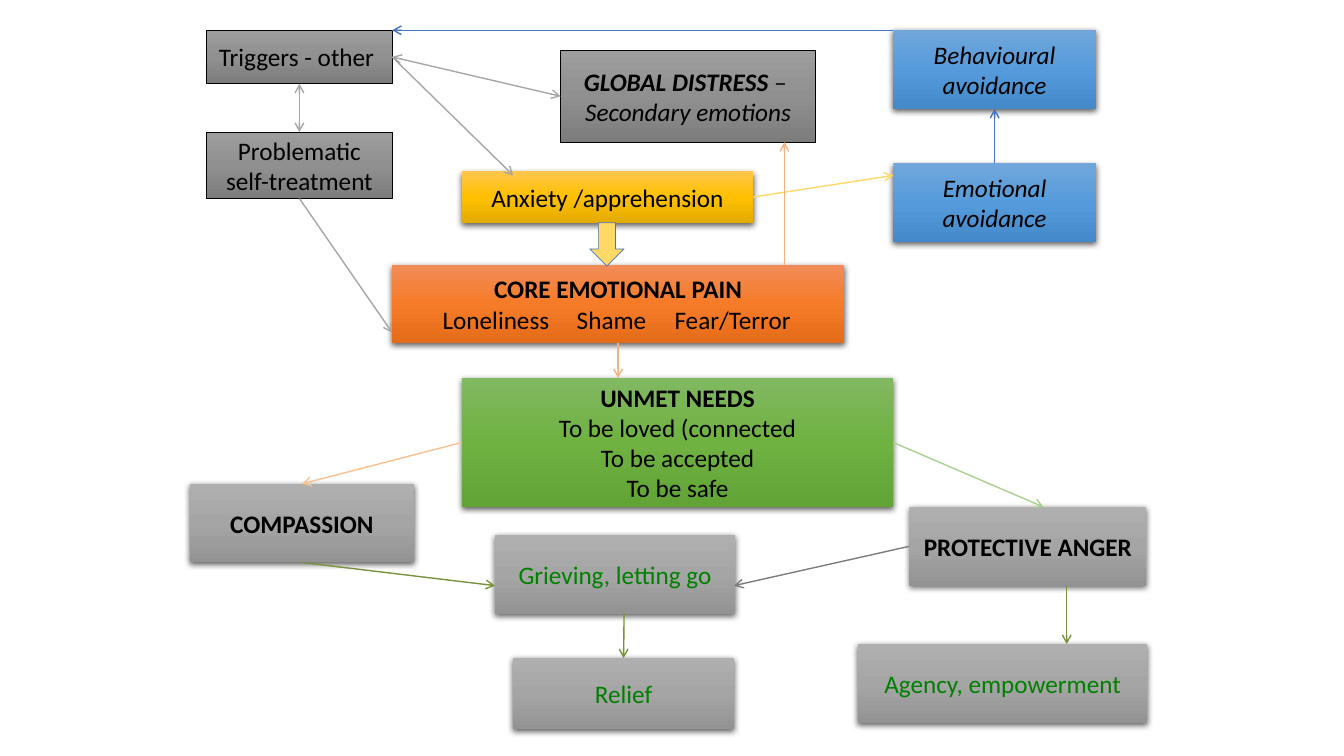
"""Build a one-slide map of emotional pain, unmet needs and ways of healing."""
from dataclasses import dataclass

from lxml.etree import SubElement
from pptx import Presentation
from pptx.dml.color import RGBColor as Rgb
from pptx.enum.shapes import MSO_CONNECTOR as Connector, MSO_SHAPE as Preset
from pptx.enum.text import MSO_ANCHOR as Anchor, PP_ALIGN as Align
from pptx.oxml.ns import qn
from pptx.util import Inches, Pt

TOP, LEFT, BOTTOM, RIGHT = range(4)


@dataclass(frozen=True)
class Theme:
    font: str = "Calibri"
    size: float = 18
    outline: float = 0.5
    stroke: float = 1
    ink: str = "000000"
    healing_ink: str = "008000"
    trigger: tuple = ("9D9D9D", "909090", "7C7C7C")
    avoidance: tuple = ("71A6DB", "559BDB", "448ACA")
    anxiety: tuple = ("FFC64B", "FFC000", "E3AB00")
    pain: tuple = ("F18C57", "F67B28", "E56C19")
    needs: tuple = ("81B861", "6FB242", "62A336")
    healing: tuple = ("AFAFAF", "A5A5A5", "939393")
    blue: str = "4472C4"
    silver: str = "A6A6A6"
    slate: str = "7C7C7C"
    olive: str = "77933C"
    peach: str = "FAC090"
    orange: str = "F4B183"
    mint: str = "A9D18E"
    yellow: str = "FFD966"


class PainMap:
    def __init__(self, slide, theme):
        self.slide, self.theme = slide, theme

    def preset(self, kind, place):
        shape = self.slide.shapes.add_shape(kind, *map(Inches, place))
        shape.shadow.inherit = False
        return shape

    def outline(self, shape, colour):
        shape.line.color.rgb = Rgb.from_string(colour)
        shape.line.width = Pt(self.theme.outline)

    def box(self, place, shades, *lines, heading="", italic=False, ink=None, outlined=False):
        shape = self.preset(Preset.RECTANGLE, place)
        self.gradient(shape, shades)
        if outlined:
            self.outline(shape, self.theme.ink)
        else:
            shape.line.fill.background()
            self.drop_shadow(shape)
        frame = shape.text_frame
        frame.word_wrap = True
        frame.vertical_anchor = Anchor.MIDDLE
        frame.text = "\n".join([heading + (lines[0] if lines else ""), *lines[1:]])
        if heading:
            first = frame.paragraphs[0]
            first.text = heading
            if lines and lines[0]:
                first.add_run().text = lines[0]
            first.runs[0].font.bold = True
        for paragraph in frame.paragraphs:
            paragraph.alignment = Align.CENTER
            for run in paragraph.runs:
                run.font.name = self.theme.font
                run.font.size = Pt(self.theme.size)
                run.font.italic = italic
                run.font.color.rgb = Rgb.from_string(ink or self.theme.ink)
        return shape

    def gradient(self, shape, shades):
        shape.fill.gradient()
        shape.fill.gradient_angle = 270
        stops = shape.fill._fill._gradFill.find(qn("a:gsLst"))
        stops.clear()
        for position, shade in zip((0, 50000, 100000), shades):
            stop = SubElement(stops, qn("a:gs"), pos=str(position))
            SubElement(stop, qn("a:srgbClr"), val=shade)

    def drop_shadow(self, shape):
        effects = shape._element.spPr.find(qn("a:effectLst"))
        shadow = SubElement(effects, qn("a:outerShdw"), blurRad=str(Pt(4.5)),
                            dist=str(Pt(1.5)), dir="5400000", rotWithShape="0")
        colour = SubElement(shadow, qn("a:srgbClr"), val=self.theme.ink)
        SubElement(colour, qn("a:alpha"), val="63000")

    def columns(self, shape, margin, stops):
        frame = shape.text_frame
        frame.margin_left = frame.margin_right = Inches(margin)
        row = frame.paragraphs[-1]
        row.alignment = Align.LEFT
        tabs = SubElement(row._p.get_or_add_pPr(), qn("a:tabLst"))
        for stop in stops:
            SubElement(tabs, qn("a:tab"), pos=str(Inches(stop)), algn="l")

    def block_arrow(self, place, fill, line):
        shape = self.preset(Preset.DOWN_ARROW, place)
        shape.fill.solid()
        shape.fill.fore_color.rgb = Rgb.from_string(fill)
        self.outline(shape, line)

    def arrow(self, start, end, colour, both=False):
        """Draw an arrow whose ends are points or (box, side) pairs."""
        glued = [not isinstance(tip[0], (int, float)) for tip in (start, end)]
        points = [(0, 0) if joined else tip for joined, tip in zip(glued, (start, end))]
        link = self.slide.shapes.add_connector(
            Connector.STRAIGHT, *(Inches(length) for point in points for length in point))
        if glued[0]:
            link.begin_connect(*start)
        if glued[1]:
            link.end_connect(*end)
        link.line.color.rgb = Rgb.from_string(colour)
        link.line.width = Pt(self.theme.stroke)
        stroke = link.line._get_or_add_ln()
        if both:
            SubElement(stroke, qn("a:headEnd"), type="arrow")
        SubElement(stroke, qn("a:tailEnd"), type="arrow")
        SubElement(link._element.spPr, qn("a:effectLst"))


def main():
    deck = Presentation()
    deck.slide_width, deck.slide_height = Inches(13.33), Inches(7.5)
    theme = Theme()
    chart = PainMap(deck.slides.add_slide(deck.slide_layouts[6]), theme)

    triggers = chart.box((2.05, 0.3, 1.84, 0.53), theme.trigger,
                         "Triggers - other ", outlined=True)
    treatment = chart.box((2.05, 1.31, 1.84, 0.66), theme.trigger,
                          "Problematic self-treatment", outlined=True)
    distress = chart.box((5.56, 0.5, 2.53, 0.91), theme.trigger, "– ", "Secondary emotions",
                         heading="GLOBAL DISTRESS ", italic=True, outlined=True)
    behavioural, emotional = (
        chart.box((8.86, top, 2.01, 0.78), theme.avoidance, f"{kind} avoidance", italic=True)
        for kind, top in (("Behavioural", 0.3), ("Emotional", 1.62)))
    anxiety = chart.box((4.58, 1.7, 2.89, 0.51), theme.anxiety, "Anxiety /apprehension")
    pain = chart.box((3.89, 2.63, 4.48, 0.77), theme.pain, "",
                     "Loneliness\tShame\tFear/Terror", heading="CORE EMOTIONAL PAIN")
    chart.columns(pain, 0.5, (1.33, 2.3))
    compassion = chart.box((1.88, 4.8, 2.23, 0.78), theme.healing, heading="COMPASSION")
    needs = chart.box((4.58, 3.75, 4.28, 1.28), theme.needs, "", "To be loved (connected",
                      "To be accepted", "To be safe", heading="UNMET NEEDS")
    anger = chart.box((9.02, 5.03, 2.35, 0.78), theme.healing, heading="PROTECTIVE ANGER")
    chart.box((4.91, 5.31, 2.38, 0.78), theme.healing, "Grieving, letting go",
              ink=theme.healing_ink)
    chart.box((8.51, 6.39, 2.87, 0.78), theme.healing, "Agency, empowerment",
              ink=theme.healing_ink)
    relief = chart.box((5.09, 6.53, 2.19, 0.7), theme.healing, "Relief",
                       ink=theme.healing_ink)

    for start, end, colour in (
        ((8.86, 0.3), (3.89, 0.3), theme.blue),
        ((treatment, BOTTOM), (3.89, 3.3), theme.silver),
        ((6.19, 6.09), (relief, TOP), theme.olive),
        ((compassion, BOTTOM), (4.91, 5.81), theme.olive),
        ((anger, LEFT), (7.28, 5.81), theme.slate),
        ((needs, LEFT), (compassion, TOP), theme.peach),
        ((pain, BOTTOM), (6.13, 3.75), theme.orange),
        ((needs, RIGHT), (10.35, 5.03), theme.mint),
        ((10.58, 5.81), (10.58, 6.39), theme.olive),
        ((anxiety, RIGHT), (8.86, 1.74), theme.yellow),
        ((triggers, RIGHT), (5.09, 1.74), theme.silver),
        ((emotional, TOP), (behavioural, BOTTOM), theme.blue),
        ((7.78, 2.63), (7.78, 1.41), theme.orange),
    ):
        chart.arrow(start, end, colour)
    chart.arrow((triggers, RIGHT), (distress, LEFT), theme.silver, both=True)
    chart.arrow((triggers, BOTTOM), (treatment, TOP), theme.silver, both=True)
    chart.block_arrow((5.85, 2.21, 0.34, 0.43), theme.yellow, theme.blue)

    deck.save("out.pptx")


if __name__ == "__main__":
    main()
